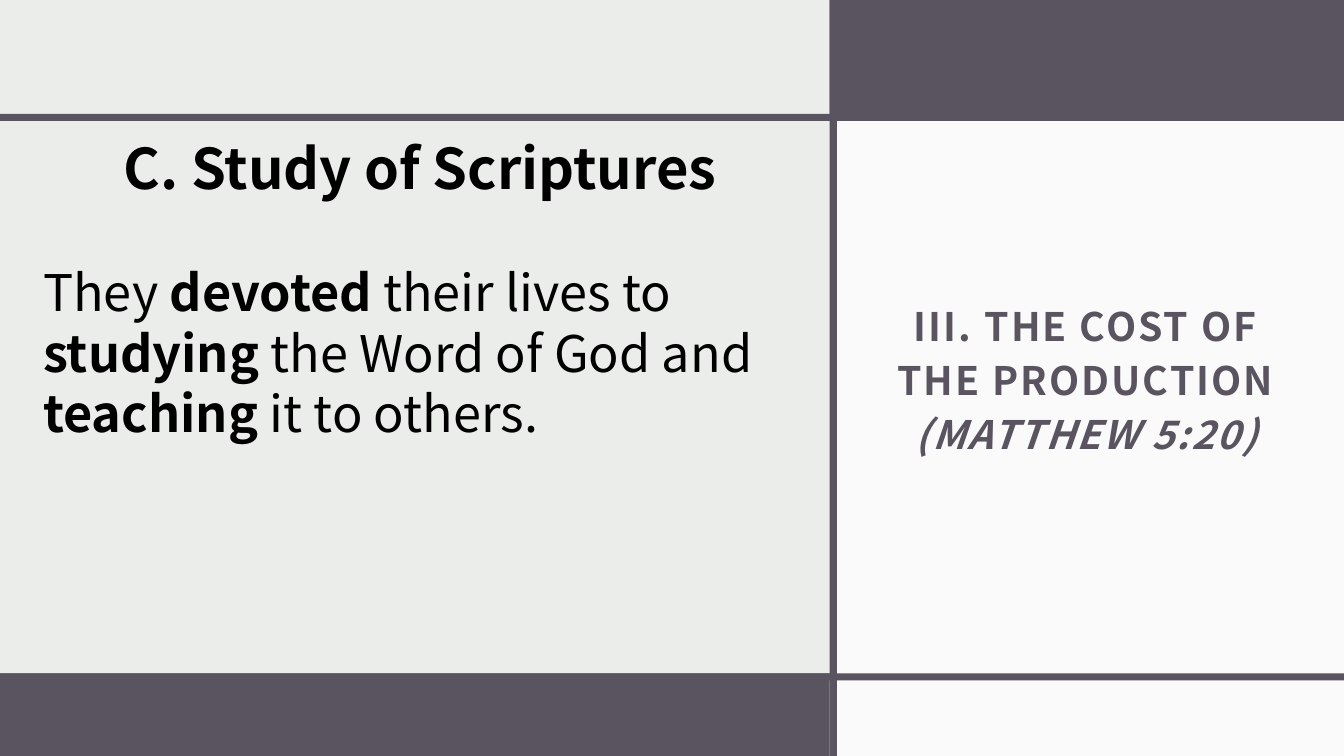
from dataclasses import dataclass

from lxml import etree
from pptx import Presentation
from pptx.dml.color import RGBColor
from pptx.enum.shapes import MSO_SHAPE
from pptx.enum.text import MSO_ANCHOR, MSO_AUTO_SIZE, PP_ALIGN
from pptx.oxml.ns import qn
from pptx.util import Inches, Pt

RECT = MSO_SHAPE.RECTANGLE
BOTTOM, TOP = MSO_ANCHOR.BOTTOM, MSO_ANCHOR.TOP
GROW, FIXED = MSO_AUTO_SIZE.SHAPE_TO_FIT_TEXT, MSO_AUTO_SIZE.NONE
LEFT, CENTER = PP_ALIGN.LEFT, PP_ALIGN.CENTER


@dataclass(frozen=True)
class Theme:
    font: str = "Noto Sans CJK JP"
    ground: str = "EBEDEB"
    dark: str = "595460"
    light: str = "FFFFFF"
    ink: str = "000000"
    head: int = 40
    body: int = 36
    side: int = 28


THEME = Theme()
WIDE, HIGH = 13.33, 7.5
BAR = 0.07
SPLIT = 8.23
RIGHT = SPLIT + BAR
UPPER, LOWER = 1.13, 6.68


def apply(target, values):
    for name, value in values.items():
        setattr(target, name, value)


def block(slide, box, color, alpha=None):
    shape = slide.shapes.add_shape(RECT, *map(Inches, box))
    shape.shadow.inherit = False
    shape.line.fill.background()
    shape.fill.solid()
    shape.fill.fore_color.rgb = RGBColor.from_string(color)
    if alpha:
        tint = shape.fill._xPr.find(".//" + qn("a:srgbClr"))
        etree.SubElement(tint, qn("a:alpha")).set("val", str(alpha * 1000))


def frame(slide, box, values):
    text = slide.shapes.add_textbox(*map(Inches, box)).text_frame
    apply(text, {"word_wrap": True, **values})
    return text


def write(para, runs, size, color, values, track=0):
    apply(para, values)
    for words, style in runs:
        run = para.add_run()
        run.text = words
        apply(run.font, {"name": THEME.font, "size": Pt(size), **style})
        run.font.color.rgb = RGBColor.from_string(color)
        if track:
            run._r.get_or_add_rPr().set("spc", str(round(track * 100)))


def grid(slide):
    wide = WIDE - RIGHT
    block(slide, (SPLIT, 0, WIDE - SPLIT, UPPER + BAR), THEME.dark)
    block(slide, (0, LOWER, SPLIT, HIGH - LOWER), THEME.dark)
    for top, end in ((UPPER + BAR, LOWER), (LOWER + BAR, HIGH)):
        block(slide, (RIGHT, top, wide, end - top), THEME.light, 75)
    for top in (UPPER, LOWER):
        block(slide, (0, top, WIDE, BAR), THEME.dark)
    block(slide, (SPLIT, 0, BAR, HIGH), THEME.dark)


def side(slide, box):
    pad = Inches(0.12)
    text = frame(slide, box, {
        "vertical_anchor": BOTTOM, "auto_size": FIXED,
        "margin_left": pad, "margin_right": pad,
        "margin_top": pad, "margin_bottom": Inches(0.1),
    })
    runs = (
        ("III. THE COST OF THE PRODUCTION ", {"bold": True}),
        ("(MATTHEW 5:20)", {"bold": True, "italic": True}),
    )
    layout = {"alignment": CENTER, "line_spacing": 1.15, "space_after": Pt(6)}
    write(text.paragraphs[0], runs, THEME.side, THEME.dark, layout, 1.5)


def lesson(slide, box):
    text = frame(slide, box, {"vertical_anchor": TOP, "auto_size": GROW})
    strong, plain = {"bold": True}, {"bold": False}
    write(text.paragraphs[0], [("C. Study of Scriptures ", strong)],
          THEME.head, THEME.ink, {"alignment": CENTER, "space_after": Pt(43)})
    runs = (
        ("They ", plain),
        ("devoted", strong),
        (" their lives to ", plain),
        ("studying", strong),
        (" the Word of God and ", plain),
        ("teaching", strong),
        (" it to others.", plain),
    )
    write(text.add_paragraph(), runs, THEME.body, THEME.ink,
          {"alignment": LEFT})


def main():
    deck = Presentation()
    apply(deck, {"slide_width": Inches(WIDE), "slide_height": Inches(HIGH)})
    slide = deck.slides.add_slide(deck.slide_layouts[6])
    fill = slide.background.fill
    fill.solid()
    fill.fore_color.rgb = RGBColor.from_string(THEME.ground)
    grid(slide)
    side(slide, (8.72, 1.87, 4.11, 2.77))
    lesson(slide, (0.33, 1.28, 7.8, 3.2))
    deck.save("out.pptx")


if __name__ == "__main__":
    main()
